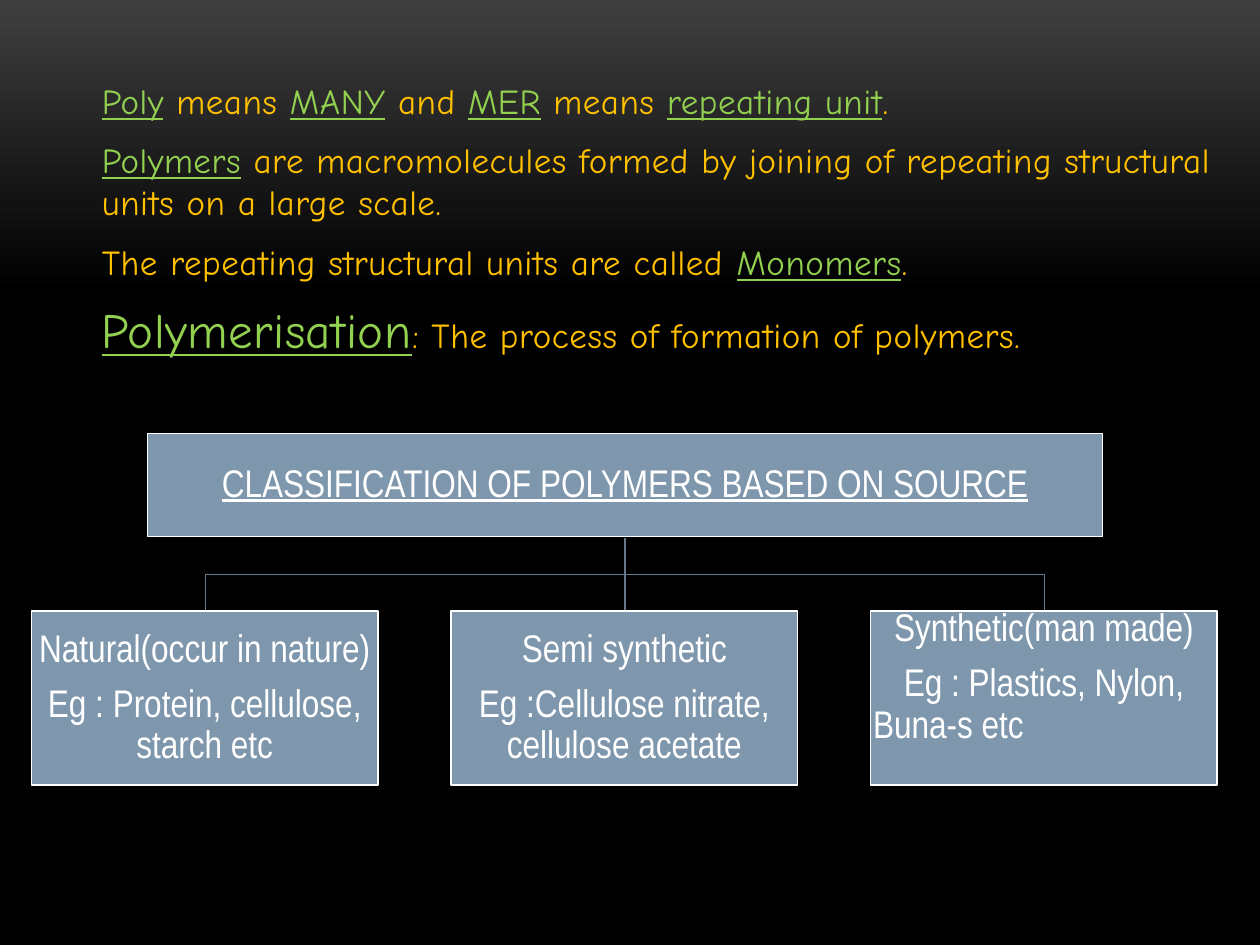
"""Build a slide defining polymers and classifying them by source."""
from dataclasses import dataclass

from lxml.etree import SubElement
from pptx import Presentation
from pptx.dml.color import RGBColor
from pptx.enum.shapes import MSO_CONNECTOR, MSO_SHAPE
from pptx.enum.text import MSO_ANCHOR, PP_ALIGN
from pptx.oxml.ns import qn
from pptx.util import Inches, Pt


@dataclass(frozen=True)
class Theme:
    term: RGBColor = RGBColor.from_string("92D050")
    prose: RGBColor = RGBColor.from_string("FFC000")
    box: RGBColor = RGBColor.from_string("7E97AD")
    branch: RGBColor = RGBColor.from_string("65798B")
    white: RGBColor = RGBColor.from_string("FFFFFF")
    glow: RGBColor = RGBColor.from_string("3F3F3F")
    black: RGBColor = RGBColor.from_string("000000")
    prose_font: str = "Comic Neue"
    box_font: str = "Arial Narrow"
    prose_size: Pt = Pt(20)
    heading_size: Pt = Pt(28)
    box_size: Pt = Pt(22)
    line_width: Pt = Pt(0.85)


theme = Theme()


def add_box(left, top, width, height, lines, underline=False):
    box = slide.shapes.add_shape(
        MSO_SHAPE.RECTANGLE, Inches(left), Inches(top), Inches(width), Inches(height))
    box.shadow.inherit = False
    box.fill.solid()
    box.fill.fore_color.rgb = theme.box
    box.line.color.rgb = theme.white
    box.line.width = theme.line_width
    frame = box.text_frame
    frame.word_wrap = True
    frame.vertical_anchor = MSO_ANCHOR.MIDDLE
    frame.margin_left = frame.margin_right = Inches(0.02)
    frame.margin_top = frame.margin_bottom = Inches(0.02)
    for index, line in enumerate(lines):
        paragraph = frame.add_paragraph() if index else frame.paragraphs[0]
        paragraph.text = line
        paragraph.alignment = PP_ALIGN.CENTER
        paragraph.line_spacing = 0.9
        paragraph.space_after = Pt(7.7)
        paragraph.font.name = theme.box_font
        paragraph.font.size = theme.box_size
        paragraph.font.color.rgb = theme.white
        paragraph.font.underline = underline
    return frame


presentation = Presentation()
presentation.slide_width = Inches(10)
presentation.slide_height = Inches(7.5)
slide = presentation.slides.add_slide(presentation.slide_layouts[6])

backdrop = slide.background.fill
backdrop.gradient()
backdrop.gradient_angle = 270
for stop, position, color in zip(
        backdrop.gradient_stops, (0, 0.31), (theme.glow, theme.black)):
    stop.position = position
    stop.color.rgb = color

definitions = [
    [("Poly", True), (" means ", False), ("MANY", True), (" and ", False),
     ("MER", True), (" means ", False), ("repeating unit", True), (".", False)],
    [("Polymers", True),
     (" are macromolecules formed by joining of repeating structural units on a large scale.", False)],
    [("The repeating structural units are called ", False), ("Monomers", True), (".", False)],
    [("Polymerisation", True), (": The process of formation of polymers.", False)],
]
prose = slide.shapes.add_textbox(
    Inches(0.33), Inches(0.58), Inches(9.42), Inches(2.25)).text_frame
prose.word_wrap = True
for index, definition in enumerate(definitions):
    paragraph = prose.add_paragraph() if index else prose.paragraphs[0]
    paragraph._p.get_or_add_pPr().set("marL", str(Inches(0.38)))
    if index:
        paragraph.space_before = Pt(4)
    paragraph.space_after = Pt(6)
    paragraph.font.name = theme.prose_font
    paragraph.font.size = theme.prose_size
    for wording, is_term in definition:
        run = paragraph.add_run()
        run.text = wording
        run.font.color.rgb = theme.term if is_term else theme.prose
        run.font.underline = is_term
        run.font._element.set("spc", "30")
        if wording == "Polymerisation":
            run.font.size = theme.heading_size

root_x, root_bottom, branch_y, source_top = 4.96, 4.27, 4.56, 4.85
source_width, source_pitch = 2.75, 3.33

for side in (1, -1):
    source_x = root_x + side * source_pitch
    builder = slide.shapes.build_freeform(Inches(root_x), Inches(root_bottom))
    builder.add_line_segments(
        [(Inches(x), Inches(y)) for x, y in (
            (root_x, branch_y), (source_x, branch_y), (source_x, source_top))],
        close=False)
    branch = builder.convert_to_shape()
    branch.shadow.inherit = False
    branch.fill.background()
    branch.line.color.rgb = theme.branch
    branch.line.width = theme.line_width

trunk = slide.shapes.add_connector(
    MSO_CONNECTOR.STRAIGHT, Inches(root_x), Inches(root_bottom),
    Inches(root_x), Inches(source_top))
trunk.line.color.rgb = theme.branch
trunk.line.width = theme.line_width
SubElement(trunk._element.spPr, qn("a:effectLst"))

add_box(1.17, 3.44, 7.58, 0.82, ["CLASSIFICATION OF POLYMERS BASED ON SOURCE"], underline=True)

sources = [
    ["Natural(occur in nature)", "Eg : Protein, cellulose, starch etc"],
    ["Semi synthetic", "Eg :Cellulose nitrate, cellulose acetate"],
    ["Synthetic(man made)", "Eg : Plastics, Nylon,", "Buna-s etc"],
]
for column, lines in enumerate(sources):
    source = add_box(0.25 + column * source_pitch, source_top, source_width, 1.38, lines)

source.margin_bottom = Inches(0.35)
source.paragraphs[1].space_after = Pt(0)
source.paragraphs[2].alignment = PP_ALIGN.LEFT

presentation.save("out.pptx")
